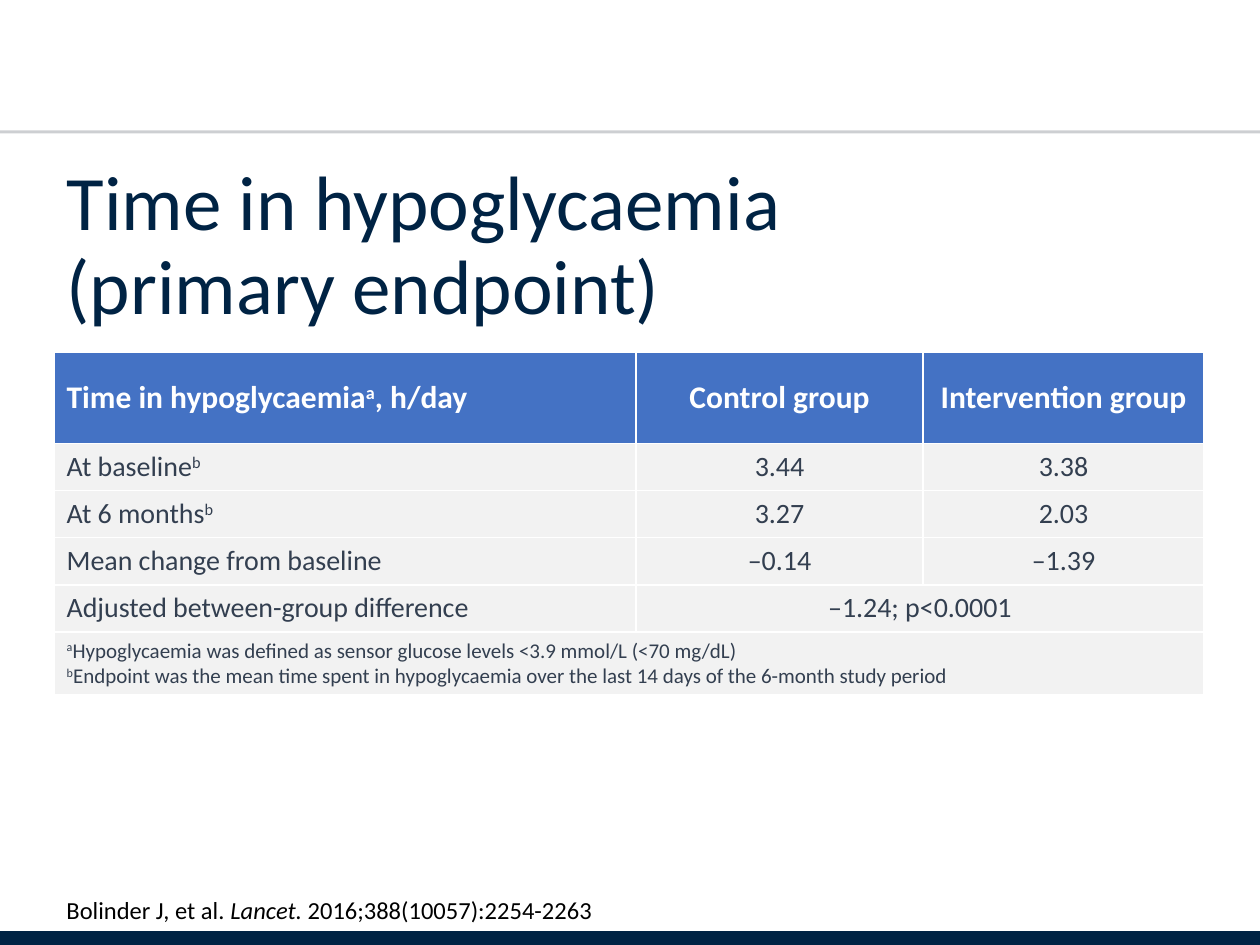
from pptx import Presentation
from pptx.dml.color import RGBColor as Rgb
from pptx.enum.shapes import MSO_CONNECTOR as Link
from pptx.enum.text import MSO_ANCHOR as Anchor, MSO_AUTO_SIZE as Fit, PP_ALIGN as Align
from pptx.oxml import parse_xml
from pptx.oxml.ns import nsdecls, qn
from pptx.util import Cm, Pt
from lxml.etree import SubElement as Sub

FONT = "Calibri"
NAVY, SLATE, BLUE, PALE, WHITE = "002344", "333F50", "4472C4", "F2F2F2", "FFFFFF"
LEFT, WIDE = 1.09, 23.22
COLS = (11.73, 5.79, 5.66)
ROWS = (1.83,) + (0.95,) * 4 + (1.24,)

# "^" switches superscript on and off
DATA = (
    ("Time in hypoglycaemia^a^, h/day", "Control group", "Intervention group"),
    ("At baseline^b", "3.44", "3.38"),
    ("At 6 months^b", "3.27", "2.03"),
    ("Mean change from baseline", "–0.14", "–1.39"),
    ("Adjusted between-group difference", "–1.24; p<0.0001"),
    ("^a^Hypoglycaemia was defined as sensor glucose levels <3.9 mmol/L (<70 mg/dL)\n"
     "^b^Endpoint was the mean time spent in hypoglycaemia over the last 14 days "
     "of the 6-month study period",),
)


def tint(code):
    return Rgb.from_string(code)


def style(run, size, color, bold=False):
    font = run.font
    font.name, font.size, font.bold = FONT, Pt(size), bold
    font.color.rgb = tint(color)


def add_line(slide, y, color, width, alpha=None):
    line = slide.shapes.add_connector(Link.STRAIGHT, 0, Cm(y), Cm(25.4), Cm(y))
    line.line.color.rgb = tint(color)
    line.line.width = Pt(width)
    if alpha:
        shade = line.line._ln.find(".//" + qn("a:srgbClr"))
        Sub(shade, qn("a:alpha"), val=str(alpha * 1000))
    Sub(line._element.spPr, qn("a:effectLst"))


def set_title(slide, text):
    title = slide.shapes.title
    title.left, title.top = Cm(LEFT), Cm(3.15)
    title.width, title.height = Cm(WIDE), Cm(3.68)
    frame = title.text_frame
    frame.text = text
    frame.word_wrap, frame.auto_size = True, Fit.NONE
    frame.vertical_anchor = Anchor.MIDDLE
    para = frame.paragraphs[0]
    para.alignment, para.line_spacing = Align.LEFT, 0.9
    for run in para.runs:
        style(run, 44, NAVY)


def add_cite(slide, parts):
    box = slide.shapes.add_textbox(Cm(LEFT), Cm(16.89), Cm(11.61), Cm(1.88))
    frame = box.text_frame
    frame.word_wrap, frame.vertical_anchor = True, Anchor.BOTTOM
    para = frame.paragraphs[0]
    para.line_spacing = 0.9
    for text, slant in parts:
        run = para.add_run()
        run.text = text
        style(run, 14, "000000")
        run.font.italic = slant


def add_edges(cell):
    props = cell._tc.get_or_add_tcPr()
    for n, side in enumerate(("lnL", "lnR", "lnT", "lnB")):
        props.insert(n, parse_xml(
            f'<a:{side} {nsdecls("a")} w="12700"><a:solidFill>'
            f'<a:srgbClr val="{WHITE}"/></a:solidFill></a:{side}>'))


def fill_cell(cell, text, size, color, bold, align):
    frame = cell.text_frame
    frame.text = text.replace("^", "")
    for para, line in zip(frame.paragraphs, text.split("\n")):
        para.alignment = align
        para.clear()
        for n, part in enumerate(line.split("^")):
            if part:
                run = para.add_run()
                run.text = part
                style(run, size, color, bold)
                if n % 2:
                    run.font._element.set("baseline", "30000")


def add_grid(slide):
    grid = slide.shapes.add_table(len(ROWS), len(COLS), Cm(LEFT), Cm(7.11),
                                  Cm(WIDE), Cm(sum(ROWS))).table
    for col, width in zip(grid.columns, COLS):
        col.width = Cm(width)
    last = len(ROWS) - 1
    for r, texts in enumerate(DATA):
        grid.rows[r].height = Cm(ROWS[r])
        head = r == 0
        size = 18 if head else 12 if r == last else 16
        for c in range(len(COLS)):
            cell = grid.cell(r, c)
            cell.fill.solid()
            cell.fill.fore_color.rgb = tint(BLUE if head else PALE)
            cell.vertical_anchor = Anchor.MIDDLE if head else Anchor.TOP
            add_edges(cell)
            if c < len(texts):
                fill_cell(cell, texts[c], size, WHITE if head else SLATE, head,
                          Align.CENTER if c else Align.LEFT)
        # A short row stretches its last cell to the right edge
        if len(texts) < len(COLS):
            grid.cell(r, len(texts) - 1).merge(grid.cell(r, len(COLS) - 1))


def main():
    deck = Presentation()
    deck.slide_width, deck.slide_height = Cm(25.4), Cm(19.05)
    slide = deck.slides.add_slide(deck.slide_layouts[5])
    # Frame lines
    add_line(slide, 18.95, NAVY, 10)
    add_line(slide, 2.66, "9DA1A6", 1.75, 50)
    # Content
    set_title(slide, "Time in hypoglycaemia\v(primary endpoint)")
    add_cite(slide, (("Bolinder J, et al. ", False), ("Lancet. ", True),
                     ("2016;388(10057):2254-2263", False)))
    add_grid(slide)
    deck.save("out.pptx")


if __name__ == "__main__":
    main()
